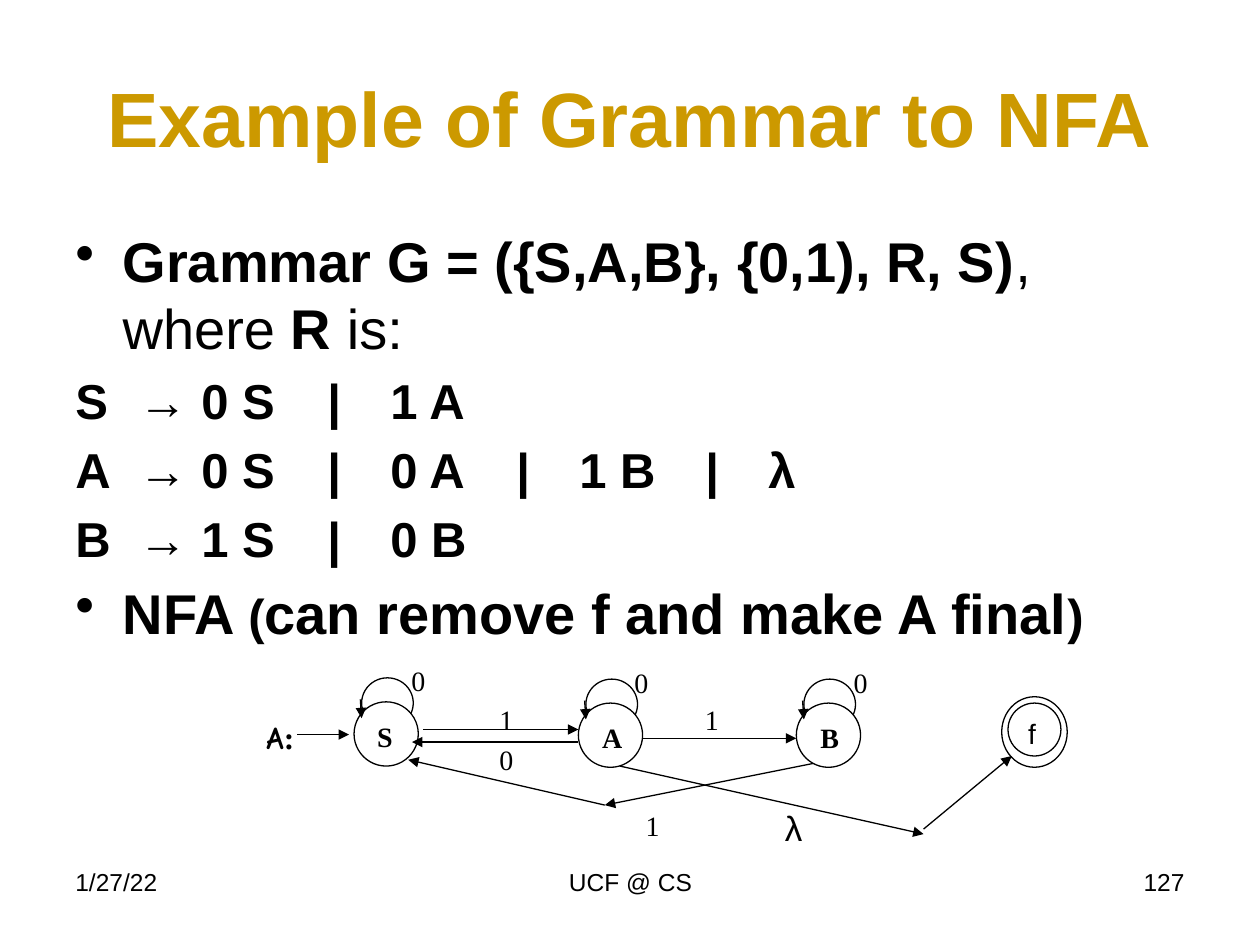
"""Build the slide that turns a grammar into an NFA."""
from dataclasses import dataclass

from lxml import etree
from pptx import Presentation
from pptx.dml.color import RGBColor
from pptx.enum.shapes import MSO_CONNECTOR, MSO_SHAPE
from pptx.enum.text import MSO_ANCHOR, PP_ALIGN
from pptx.oxml.ns import qn
from pptx.util import Inches, Pt

OVAL = MSO_SHAPE.OVAL
STRAIGHT = MSO_CONNECTOR.STRAIGHT
LEFT, CENTER, RIGHT = PP_ALIGN.LEFT, PP_ALIGN.CENTER, PP_ALIGN.RIGHT
MIDDLE = MSO_ANCHOR.MIDDLE
BLACK, WHITE, GOLD = "000000", "FFFFFF", "CC9900"
SANS, SERIF, COMIC = "Arial", "Times New Roman", "Comic Neue"
SLIDE_COLUMNS, SLIDE_ROWS = 100, 75
CELL = Inches(0.1)
BULLET_INDENT = 3.75 * CELL
STATE_SIZE = 5.1


@dataclass(frozen=True)
class Box:
    """A rectangle in grid columns and rows."""
    column: float
    row: float
    columns: float
    rows: float


@dataclass(frozen=True)
class Piece:
    """A stretch of text with one format."""
    text: str
    size: float = 16
    bold: bool = False
    font: str = SANS
    color: str = BLACK


@dataclass(frozen=True)
class Line:
    """A paragraph of the body."""
    pieces: tuple[Piece, ...]
    bulleted: bool = False


@dataclass(frozen=True)
class Label:
    """A text box of one paragraph."""
    box: Box
    pieces: tuple[Piece, ...]
    align: PP_ALIGN = CENTER
    inset: bool = True


@dataclass(frozen=True)
class State:
    """A state with a self loop, given by its top left corner."""
    name: str
    column: float
    row: float
    name_box: Box


@dataclass(frozen=True)
class Arrow:
    """An arrow from one grid point to another."""
    start: tuple[float, float]
    end: tuple[float, float]


def symbol(text: str, column: float, row: float) -> Label:
    """Return the label of a transition."""
    return Label(Box(column, row, 2, 3), (Piece(text, font=SERIF),), inset=False)


TITLE = Piece("Example of Grammar to NFA", 44, True, color=GOLD)
BODY = (
    Line((Piece("Grammar G = ({S,A,B}, {0,1), R, S)", 32, True), Piece(", where ", 32),
          Piece("R", 32, True), Piece(" is:", 32)), True),
    Line((Piece("S\t→\t0 S \t|\t1 A", 28, True),)),
    Line((Piece("A\t→\t0 S\t|\t0 A\t|\t1 B\t|\tλ", 28, True),)),
    Line((Piece("B\t→\t1 S\t|\t0 B", 28, True),)),
    Line((Piece("NFA ", 32, True), Piece("(", 28, True),
          Piece("can remove f and make A final", 32, True), Piece(")", 28, True)), True),
)
STATES = (
    State("S", 28.1, 55.7, Box(28.6, 56.6, 3.9, 3.6)),
    State("A", 45.9, 55.8, Box(45.1, 56.7, 7, 4.6)),
    State("B", 63.2, 55.8, Box(63.9, 56.7, 3.9, 3.5)),
)
ARROWS = (
    Arrow((23.6, 58.3), (27.7, 58.3)),
    Arrow((33.6, 57.9), (45.9, 57.9)),
    Arrow((45.9, 58.9), (32.7, 58.9)),
    Arrow((51, 58.6), (63.2, 58.6)),
    Arrow((64.5, 60.6), (48, 63.9)),
    Arrow((48, 63.9), (32.4, 60.3)),
    Arrow((49.2, 60.8), (73.3, 66.2)),
    Arrow((73.3, 65.8), (80.3, 60)),
)
LABELS = (
    Label(Box(5, 68.3, 23.3, 5.2), (Piece("1/27/22", 14),), LEFT),
    Label(Box(34.2, 68.3, 31.7, 5.2), (Piece("UCF @ CS", 14),)),
    Label(Box(71.7, 68.3, 23.3, 5.2), (Piece("127", 14),), RIGHT),
    Label(Box(19.9, 56.5, 4.7, 3.2),
          (Piece("A", 18, True, COMIC), Piece(":", 18, True, SERIF))),
    symbol("0", 32.2, 52.7),
    symbol("0", 49.9, 52.8),
    symbol("0", 67.3, 52.8),
    symbol("1", 39.2, 55.8),
    symbol("0", 39.2, 58.9),
    symbol("1", 55.5, 55.8),
    symbol("1", 50.8, 64.2),
    Label(Box(61.3, 63.5, 3.5, 4.4), (Piece("λ", 20),), LEFT),
)


def color_of(value: str) -> RGBColor:
    """Return the colour of a hex string."""
    return RGBColor.from_string(value)


def place(box: Box) -> tuple[int, int, int, int]:
    """Return a box as slide lengths."""
    return tuple(round(cells * CELL) for cells in (box.column, box.row, box.columns, box.rows))


def write(paragraph, pieces: tuple[Piece, ...], align: PP_ALIGN = LEFT) -> None:
    """Fill a paragraph with formatted runs."""
    paragraph.alignment = align
    for piece in pieces:
        run = paragraph.add_run()
        run.text = piece.text
        run.font.name, run.font.size, run.font.bold = piece.font, Pt(piece.size), piece.bold
        run.font.color.rgb = color_of(piece.color)


def draw_label(slide, label: Label) -> None:
    """Draw a text box."""
    frame = slide.shapes.add_textbox(*place(label.box)).text_frame
    frame.word_wrap = True
    if not label.inset:
        frame.margin_left = frame.margin_top = frame.margin_right = frame.margin_bottom = 0
    write(frame.paragraphs[0], label.pieces, label.align)


def draw_title(slide) -> None:
    """Move and fill the title placeholder."""
    title = slide.shapes.title
    title.left, title.top, title.width, title.height = place(Box(5, 3, 90, 12.5))
    title.text_frame.vertical_anchor = MIDDLE
    write(title.text_frame.paragraphs[0], (TITLE,), CENTER)


def draw_body(slide) -> None:
    """Draw the grammar rules."""
    frame = slide.shapes.add_textbox(*place(Box(5, 17.5, 90, 48.3))).text_frame
    frame.word_wrap = True
    for index, line in enumerate(BODY):
        paragraph = frame.add_paragraph() if index else frame.paragraphs[0]
        write(paragraph, line.pieces)
        paragraph.space_before = Pt(0.2 * line.pieces[0].size)
        if line.bulleted:
            properties = paragraph._p.get_or_add_pPr()
            properties.set("marL", str(round(BULLET_INDENT)))
            properties.set("indent", str(-round(BULLET_INDENT)))
            etree.SubElement(properties, qn("a:buChar")).set("char", "•")


def draw_circle(slide, box: Box, filled: bool = True):
    """Draw an outlined ellipse and return it."""
    circle = slide.shapes.add_shape(OVAL, *place(box))
    circle.shadow.inherit = False
    if filled:
        circle.fill.solid()
        circle.fill.fore_color.rgb = color_of(WHITE)
    else:
        circle.fill.background()
    circle.line.color.rgb = color_of(BLACK)
    circle.line.width = Pt(0.75)
    return circle


def draw_arrow(slide, arrow: Arrow) -> None:
    """Draw a line with a triangle at its end."""
    points = [round(cells * CELL) for cells in arrow.start + arrow.end]
    connector = slide.shapes.add_connector(STRAIGHT, *points)
    connector.line.color.rgb = color_of(BLACK)
    connector.line.width = Pt(0.75)
    etree.SubElement(connector.line._get_or_add_ln(), qn("a:tailEnd")).set("type", "triangle")
    etree.SubElement(connector._element.spPr, qn("a:effectLst"))


def draw_state(slide, state: State) -> None:
    """Draw a state with its loop and name."""
    draw_circle(slide, Box(state.column + 0.6, state.row - 1.9, 4.1, 4))
    draw_circle(slide, Box(state.column, state.row, STATE_SIZE, STATE_SIZE))
    draw_label(slide, Label(state.name_box, (Piece(state.name, 16, True, SERIF),)))
    draw_arrow(slide, Arrow((state.column + 0.5, state.row - 0.2),
                            (state.column + 0.6, state.row + 1.3)))


def draw_final_state(slide) -> None:
    """Draw the double circle of the final state."""
    frame = draw_circle(slide, Box(80, 55.8, 4.2, 4.2)).text_frame
    frame.vertical_anchor = MSO_ANCHOR.TOP
    write(frame.paragraphs[0], (Piece("f"),))
    draw_circle(slide, Box(79.5, 55.3, 5.2, 5.6), filled=False)


def main() -> None:
    """Build and save the presentation."""
    presentation = Presentation()
    presentation.slide_width = SLIDE_COLUMNS * CELL
    presentation.slide_height = SLIDE_ROWS * CELL
    slide = presentation.slides.add_slide(presentation.slide_layouts.get_by_name("Title Only"))
    draw_title(slide)
    draw_body(slide)
    for state in STATES:
        draw_state(slide, state)
    draw_final_state(slide)
    for arrow in ARROWS:
        draw_arrow(slide, arrow)
    for label in LABELS:
        draw_label(slide, label)
    presentation.save("out.pptx")


if __name__ == "__main__":
    main()
